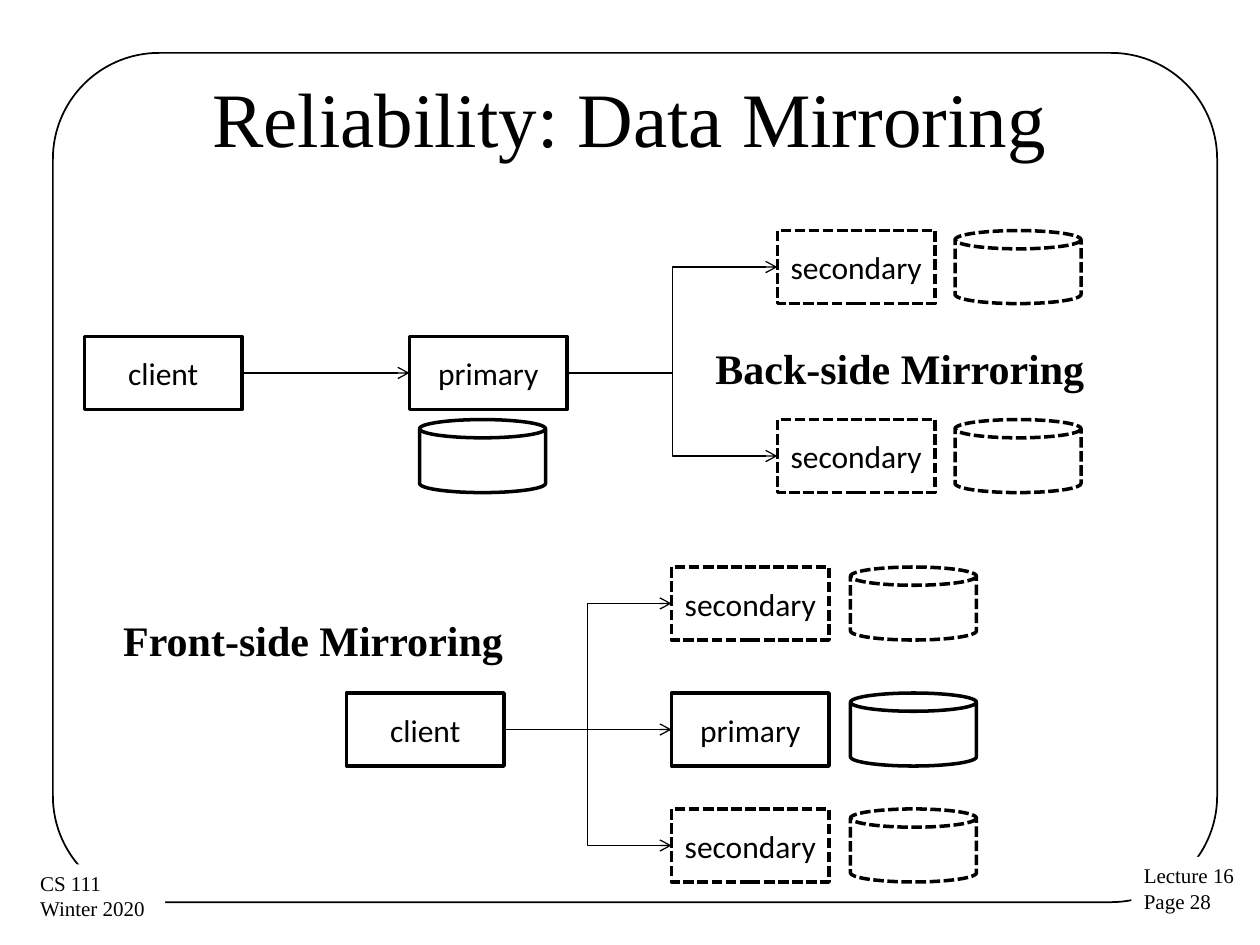
import pptx
import pptx.util
import pptx.dml.color
import pptx.enum.dml
import pptx.enum.shapes
import pptx.enum.text
import lxml.etree
from dataclasses import dataclass

Inches = pptx.util.Inches
Pt = pptx.util.Pt
Shape = pptx.enum.shapes.MSO_SHAPE
Align = pptx.enum.text.PP_ALIGN
Anchor = pptx.enum.text.MSO_ANCHOR
AutoSize = pptx.enum.text.MSO_AUTO_SIZE
Connector = pptx.enum.shapes.MSO_CONNECTOR


@dataclass
class Theme:
    ink: object = pptx.dml.color.RGBColor(0, 0, 0)
    paper: object = pptx.dml.color.RGBColor(255, 255, 255)
    serif: str = "Times New Roman"
    sans: str = "Calibri"
    title: object = Pt(44)
    heading: object = Pt(24)
    node: object = Pt(18)
    footer: object = Pt(12)
    frame_line: object = Pt(1)
    node_line: object = Pt(2)
    arrow_line: object = Pt(0.75)


theme = Theme()


def write(box, lines, font, frame, align=Align.LEFT):
    for name, value in frame.items():
        setattr(box.text_frame, name, value)
    box.text_frame.text = "\n".join(lines)
    for para in box.text_frame.paragraphs:
        para.alignment = align
        for span in para.runs:
            span.font.color.rgb = theme.ink
            for name, value in font.items():
                setattr(span.font, name, value)


def outline(kind, left, top, width, height, weight, dashed=False):
    shape = page.shapes.add_shape(
        kind, Inches(left), Inches(top), Inches(width), Inches(height))
    shape.shadow.inherit = False
    shape.fill.background()
    shape.line.color.rgb = theme.ink
    shape.line.width = weight
    if dashed:
        shape.line.dash_style = pptx.enum.dml.MSO_LINE.SQUARE_DOT
    return shape


deck = pptx.Presentation()
deck.slide_width, deck.slide_height = Inches(10), Inches(7.5)
page = deck.slides.add_slide(deck.slide_layouts[5])

frame = outline(Shape.ROUNDED_RECTANGLE, 0.42, 0.42, 9.24, 6.74, theme.frame_line)
frame.adjustments[0] = 0.125

footers = [
    (8.98, 6.8, 0.93, ["Lecture 16", "Page 28"]),
    (0.22, 6.86, 1.09, ["CS 111", "Winter 2020"]),
]
for left, top, width, lines in footers:
    box = page.shapes.add_textbox(Inches(left), Inches(top), Inches(width), Inches(0.51))
    box.fill.solid()
    box.fill.fore_color.rgb = theme.paper
    write(box, lines, {"name": theme.serif, "size": theme.footer},
          {"word_wrap": False, "auto_size": AutoSize.SHAPE_TO_FIT_TEXT})

title = page.shapes.title
title.left, title.top, title.width, title.height = map(Inches, (0.5, 0.3, 9, 1.25))
write(title, ["Reliability: Data Mirroring"], {"name": theme.serif, "size": theme.title},
      {"vertical_anchor": Anchor.MIDDLE, "auto_size": AutoSize.NONE}, Align.CENTER)

headings = [(5.58, 2.67, "Back-side Mirroring"), (0.88, 4.83, "Front-side Mirroring")]
for left, top, words in headings:
    box = page.shapes.add_textbox(Inches(left), Inches(top), Inches(3.5), Inches(0.5))
    write(box, [words], {"name": theme.serif, "size": theme.heading, "bold": True},
          {"word_wrap": True, "auto_size": AutoSize.SHAPE_TO_FIT_TEXT})

node_width, disk_width, node_height = 1.25, 1, 0.58
nodes = [
    ("back client", 0.67, 2.67, None),
    ("back primary", 3.25, 2.67, (3.33, 3.33)),
    ("back upper secondary", 6.17, 1.83, (7.58, 1.83)),
    ("back lower secondary", 6.17, 3.33, (7.58, 3.33)),
    ("front client", 2.75, 5.5, None),
    ("front upper secondary", 5.33, 4.5, (6.75, 4.5)),
    ("front primary", 5.33, 5.5, (6.75, 5.5)),
    ("front lower secondary", 5.33, 6.42, (6.75, 6.42)),
]
boxes = {}
for name, left, top, disk in nodes:
    role = name.split()[-1]
    dashed = role == "secondary"
    box = outline(Shape.RECTANGLE, left, top, node_width, node_height,
                  theme.node_line, dashed)
    write(box, [role], {"name": theme.sans, "size": theme.node},
          {"word_wrap": True, "vertical_anchor": Anchor.MIDDLE}, Align.CENTER)
    boxes[name] = box
    if disk:
        outline(Shape.CAN, *disk, disk_width, node_height, theme.node_line, dashed)

right_side, left_side = 3, 1
links = [
    ("back client", "back primary", Connector.STRAIGHT),
    ("back primary", "back upper secondary", Connector.ELBOW),
    ("back primary", "back lower secondary", Connector.ELBOW),
    ("front client", "front upper secondary", Connector.ELBOW),
    ("front client", "front primary", Connector.STRAIGHT),
    ("front client", "front lower secondary", Connector.ELBOW),
]
qn = pptx.oxml.ns.qn
for source, target, kind in links:
    start, end = boxes[source], boxes[target]
    arrow = page.shapes.add_connector(
        kind, start.left + start.width, start.top + start.height // 2,
        end.left, end.top + end.height // 2)
    arrow.begin_connect(start, right_side)
    arrow.end_connect(end, left_side)
    arrow.line.color.rgb = theme.ink
    arrow.line.width = theme.arrow_line
    properties = arrow.line._get_or_add_ln()
    lxml.etree.SubElement(properties, qn("a:tailEnd"), type="arrow")
    lxml.etree.SubElement(properties.getparent(), qn("a:effectLst"))

deck.save("out.pptx")
